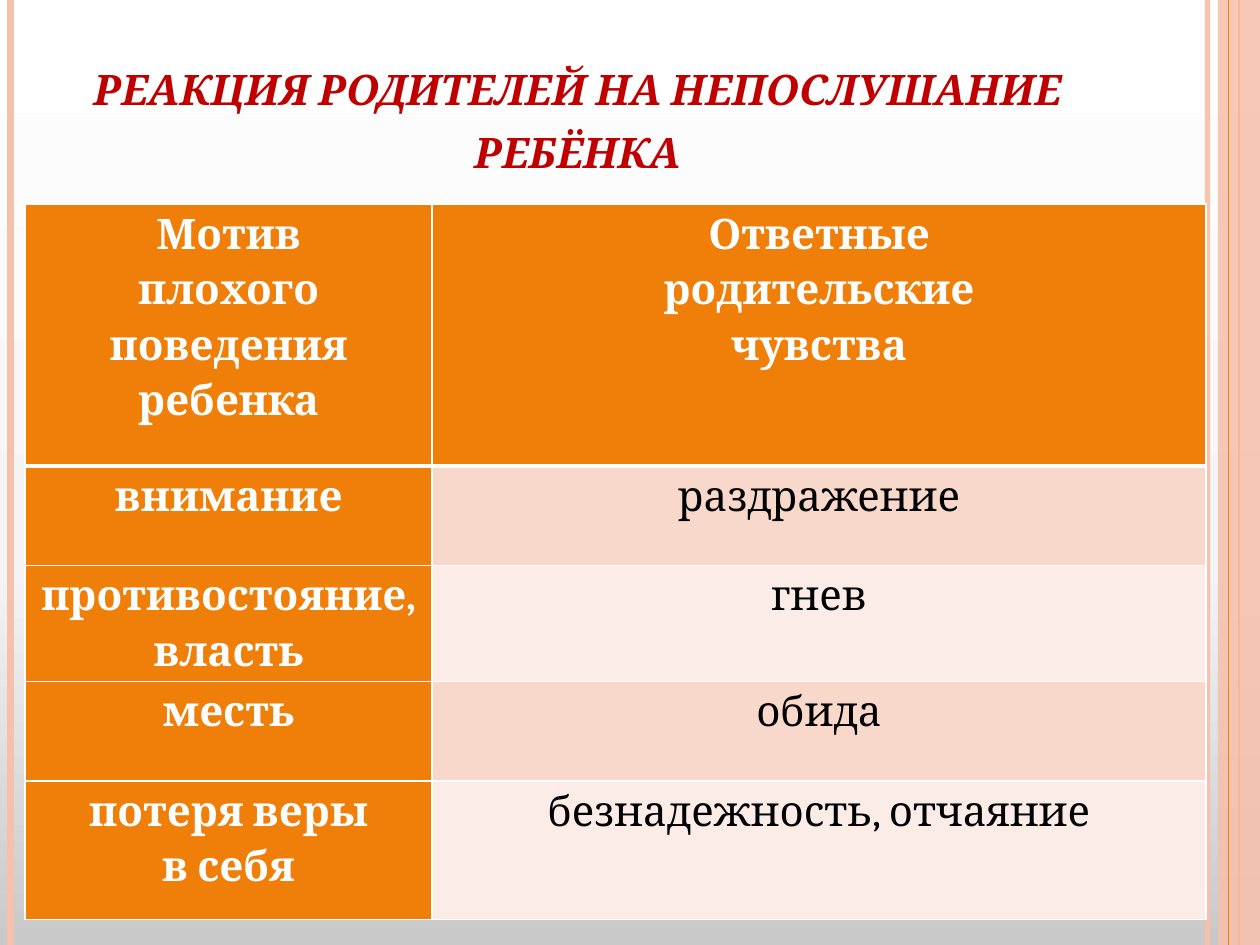
"""Builds a slide with a table of parents' feelings for each motive of a child's bad behaviour."""
import copy
from pptx import Presentation, util as u
from pptx.dml import color
from pptx.enum import shapes, text
from pptx.oxml import ns, xmlchemy as xml

HUES = {"peach": "F6C0AB", "orange": "F07F09", "red": "C00000", "white": "FFFFFF",
        "black": "000000", "rose": "F9D8CC", "blush": "FCECE7",
        "grey": "C9C9C9", "pale": "F4F4F4"}
RGB = {name: color.RGBColor.from_string(hue) for name, hue in HUES.items()}

deck = Presentation()
deck.slide_width, deck.slide_height = u.Inches(10), u.Inches(7.5)
COL, ROW = deck.slide_width / 120, deck.slide_height / 100
slide = deck.slides.add_slide(deck.slide_layouts[6])


def add(node, tag, **attrs):
    kid = xml.OxmlElement(tag)
    for key, val in attrs.items():
        kid.set(key, str(val))
    node.append(kid)
    return kid


def write(para, words, size, hue, bold):
    para.alignment = text.PP_ALIGN.CENTER
    run = para.add_run()
    run.text = words
    font = run.font
    font.name, font.size, font.bold = "Cambria", u.Pt(size), bold
    font.color.rgb = RGB[hue]
    return run


back = slide.background.fill
back.gradient()
back.gradient_angle = 90
stops = slide.element.find(".//" + ns.qn("a:gsLst"))
stops.insert(1, copy.deepcopy(stops[0]))
for stop, (pos, hue) in zip(back.gradient_stops, [(0, "grey"), (0.4, "pale"), (1, "white")]):
    stop.position, stop.color.rgb = pos, RGB[hue]

for col, hue, wide, alpha in [(115, "peach", 3, 93), (1, "peach", 4.5, 100),
                              (118, "orange", 1.5, 100), (116, "peach", 0, 87),
                              (117, "orange", 0.75, 100)]:
    left = int(col * COL)
    if wide:
        item = slide.shapes.add_connector(shapes.MSO_CONNECTOR.STRAIGHT,
                                          left, 0, left, deck.slide_height)
        item.line.width = u.Pt(wide)
        item.line.color.rgb = RGB[hue]
        add(item.element.spPr, "a:effectLst")
    else:
        item = slide.shapes.add_shape(shapes.MSO_SHAPE.RECTANGLE, left, 0,
                                      deck.slide_width - left, deck.slide_height)
        item.shadow.inherit = False
        item.fill.solid()
        item.fill.fore_color.rgb = RGB[hue]
        item.line.fill.background()
    if alpha < 100:
        tint = item.element.spPr.find(".//" + ns.qn("a:srgbClr"))
        add(tint, "a:alpha", val=alpha * 1000)

title = slide.shapes.add_textbox(int(6 * COL), int(4 * ROW), int(98 * COL), int(15.6 * ROW))
frame = title.text_frame
frame.word_wrap = True
frame.vertical_anchor = text.MSO_ANCHOR.BOTTOM
run = write(frame.paragraphs[0], "реакция родителей на непослушание ребёнка", 30, "red", True)
run.font.italic = True
run.font._element.set("cap", "small")

GRID = [
    (27.73, ["Мотив", "плохого", "поведения", "ребенка"], ["Ответные", "родительские", "чувства"]),
    (10.53, ["внимание"], ["раздражение"]),
    (9.47, ["противостояние,", "власть"], ["гнев"]),
    (10.53, ["месть"], ["обида"]),
    (14.67, ["потеря веры", "в себя"], ["безнадежность, отчаяние"]),
]
table = slide.shapes.add_table(len(GRID), 2, int(2.4 * COL), int(21.6 * ROW),
                               int(112.44 * COL), int(72.93 * ROW)).table
for col, wide in zip(table.columns, (38.76, 73.68)):
    col.width = int(wide * COL)

for r, (high, *cells) in enumerate(GRID):
    table.rows[r].height = int(high * ROW)
    for c, lines in enumerate(cells):
        cell = table.cell(r, c)
        head = r == 0 or c == 0
        cell.margin_left = cell.margin_right = u.Inches(0.07)
        cell.margin_top = cell.margin_bottom = 0
        for n, words in enumerate(lines):
            para = cell.text_frame.add_paragraph() if n else cell.text_frame.paragraphs[0]
            para.line_spacing = 1.15
            write(para, words, 24, "white" if head else "black", head)
        props = cell._tc.get_or_add_tcPr()
        for side in "LRTB":
            thick = (r, side) in [(0, "B"), (1, "T")]
            edge = add(props, "a:ln" + side, w=u.Pt(3 if thick else 1))
            add(add(edge, "a:solidFill"), "a:srgbClr", val=HUES["white"])
        cell.fill.solid()
        cell.fill.fore_color.rgb = RGB["orange" if head else "rose" if r % 2 else "blush"]

deck.save("out.pptx")
